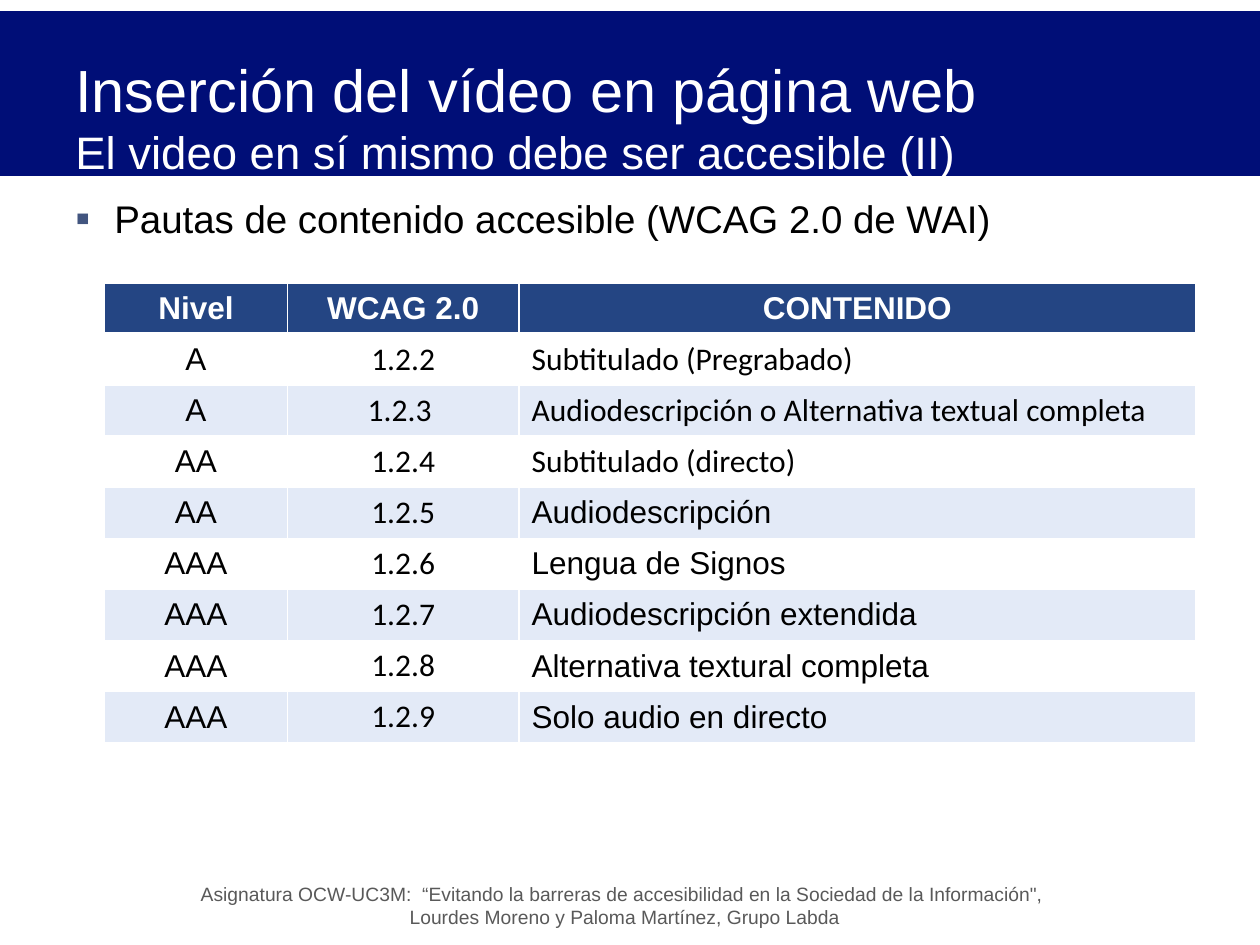
"""Build the slide on accessible video with its table of WCAG criteria."""
from dataclasses import dataclass
from typing import NamedTuple

from pptx import Presentation
from pptx.dml.color import RGBColor
from pptx.enum.shapes import MSO_SHAPE
from pptx.enum.text import MSO_ANCHOR, PP_ALIGN
from pptx.oxml import parse_xml
from pptx.oxml.ns import nsdecls
from pptx.util import Inches, Pt

W, H = Inches(10), Inches(7.5)
NAVY = RGBColor(0x00, 0x0E, 0x77)
BLUE = RGBColor(0x24, 0x45, 0x83)
PALE = RGBColor(0xE3, 0xEA, 0xF7)
SLATE = RGBColor(0x42, 0x55, 0x7F)
GREY = RGBColor(0x59, 0x59, 0x59)
WHITE = RGBColor(0xFF, 0xFF, 0xFF)
BLACK = RGBColor(0x00, 0x00, 0x00)
SANS, ALT = "Arial", "Calibri"


@dataclass(frozen=True)
class Box:
    """A frame in percent of the slide's width and height."""
    x: float
    y: float
    w: float
    h: float

    def emu(self) -> tuple:
        """Return left, top, width and height as lengths."""
        return tuple(round(v * side / 100) for v, side in
                     ((self.x, W), (self.y, H), (self.w, W), (self.h, H)))


class Criterion(NamedTuple):
    """A table row: level, number, content and the content's font."""
    level: str
    number: str
    content: str
    font: str = SANS


BAND = Box(0, 1.33, 100, 17.07)
TITLE = Box(5, 6, 90, 12.53)
BODY = Box(5, 20, 90.7, 71.6)
TABLE = Box(8.3, 30, 86.6, 48.53)
FOOTER = Box(4.3, 92.67, 90.6, 7.33)
COLUMNS = (14.5, 18.4, 53.7)
HEADER_ROW, BODY_ROW = 5.3, 5.41
HEADINGS = ("Nivel", "WCAG 2.0", "CONTENIDO")
CRITERIA = (
    Criterion("A", "1.2.2", "Subtitulado (Pregrabado)", ALT),
    Criterion("A", "1.2.3 ", "Audiodescripción o Alternativa textual completa", ALT),
    Criterion("AA", "1.2.4", "Subtitulado (directo)", ALT),
    Criterion("AA", "1.2.5", "Audiodescripción"),
    Criterion("AAA", "1.2.6", "Lengua de Signos"),
    Criterion("AAA", "1.2.7", "Audiodescripción extendida"),
    Criterion("AAA", "1.2.8", "Alternativa textural completa"),
    Criterion("AAA", "1.2.9", "Solo audio en directo"),
)


def write(p, text: str, *, size: float, color: RGBColor = BLACK,
          font: str = SANS, bold: bool = False, align=PP_ALIGN.LEFT) -> None:
    """Add a formatted run to a paragraph."""
    p.alignment = align
    r = p.add_run()
    r.text = text
    r.font.size, r.font.name, r.font.bold = Pt(size), font, bold
    r.font.color.rgb = color


def add_box(s, box: Box, anchor=MSO_ANCHOR.TOP):
    """Add a wrapping text box and return its text frame."""
    tf = s.shapes.add_textbox(*box.emu()).text_frame
    tf.word_wrap = True
    tf.vertical_anchor = anchor
    return tf


def add_bullet(p) -> None:
    """Give a paragraph a square bullet with a hanging indent."""
    pPr = p._p.get_or_add_pPr()
    pPr.set("marL", str(Inches(0.31)))
    pPr.set("indent", str(-Inches(0.31)))
    for xml in (f'<a:buClr {nsdecls("a")}><a:srgbClr val="{SLATE}"/></a:buClr>',
                f'<a:buSzPct {nsdecls("a")} val="110000"/>',
                f'<a:buFont {nsdecls("a")} typeface="{SANS}"/>',
                f'<a:buChar {nsdecls("a")} char="▪"/>'):
        pPr.append(parse_xml(xml))


def fill_cell(cell, text: str, fill: RGBColor, bottom: float = 1, **fmt) -> None:
    """Write a cell, fill it and rule its edges in white."""
    cell.vertical_anchor = MSO_ANCHOR.MIDDLE
    write(cell.text_frame.paragraphs[0], text, size=18, **fmt)
    tcPr = cell._tc.get_or_add_tcPr()
    for edge, width in (("L", 1), ("R", 1), ("T", 1), ("B", bottom)):
        tcPr.append(parse_xml(
            f'<a:ln{edge} {nsdecls("a")} w="{Pt(width)}"><a:solidFill>'
            f'<a:srgbClr val="{WHITE}"/></a:solidFill></a:ln{edge}>'))
    cell.fill.solid()
    cell.fill.fore_color.rgb = fill


def add_criteria(s) -> None:
    """Add the table of criteria with alternating row fills."""
    table = s.shapes.add_table(len(CRITERIA) + 1, len(COLUMNS), *TABLE.emu()).table
    for col, share in zip(table.columns, COLUMNS):
        col.width = round(W * share / 100)
    for i, row in enumerate(table.rows):
        row.height = round(H * (BODY_ROW if i else HEADER_ROW) / 100)
    for j, heading in enumerate(HEADINGS):
        fill_cell(table.cell(0, j), heading, BLUE, bottom=3, color=WHITE,
                  bold=True, align=PP_ALIGN.CENTER)
    for i, c in enumerate(CRITERIA, 1):
        fill = WHITE if i % 2 else PALE
        fill_cell(table.cell(i, 0), c.level, fill, align=PP_ALIGN.CENTER)
        fill_cell(table.cell(i, 1), c.number, fill, font=ALT, align=PP_ALIGN.CENTER)
        fill_cell(table.cell(i, 2), c.content, fill, font=c.font)


def main() -> None:
    """Build and save the slide."""
    prs = Presentation()
    prs.slide_width, prs.slide_height = W, H
    s = prs.slides.add_slide(prs.slide_layouts[6])

    sp = s.shapes.add_shape(MSO_SHAPE.RECTANGLE, *BAND.emu())
    sp.shadow.inherit = False
    sp.fill.solid()
    sp.fill.fore_color.rgb = sp.line.color.rgb = NAVY
    sp.line.width = Pt(2)

    p = add_box(s, TITLE, MSO_ANCHOR.MIDDLE).paragraphs[0]
    write(p, "Inserción del vídeo en página web", size=34, color=WHITE)
    p.add_line_break()
    write(p, "El video en sí mismo debe ser accesible (II)", size=26, color=WHITE)

    p = add_box(s, BODY).paragraphs[0]
    add_bullet(p)
    write(p, "Pautas de contenido accesible (WCAG 2.0 de WAI)", size=22)

    add_criteria(s)

    tf = add_box(s, FOOTER)
    for p, line in (
        (tf.paragraphs[0], "Asignatura OCW-UC3M:  “Evitando la barreras de "
                           "accesibilidad en la Sociedad de la Información\", "),
        (tf.add_paragraph(), "Lourdes Moreno y Paloma Martínez, Grupo Labda"),
    ):
        write(p, line, size=11, color=GREY, align=PP_ALIGN.CENTER)

    prs.save("out.pptx")


if __name__ == "__main__":
    main()
